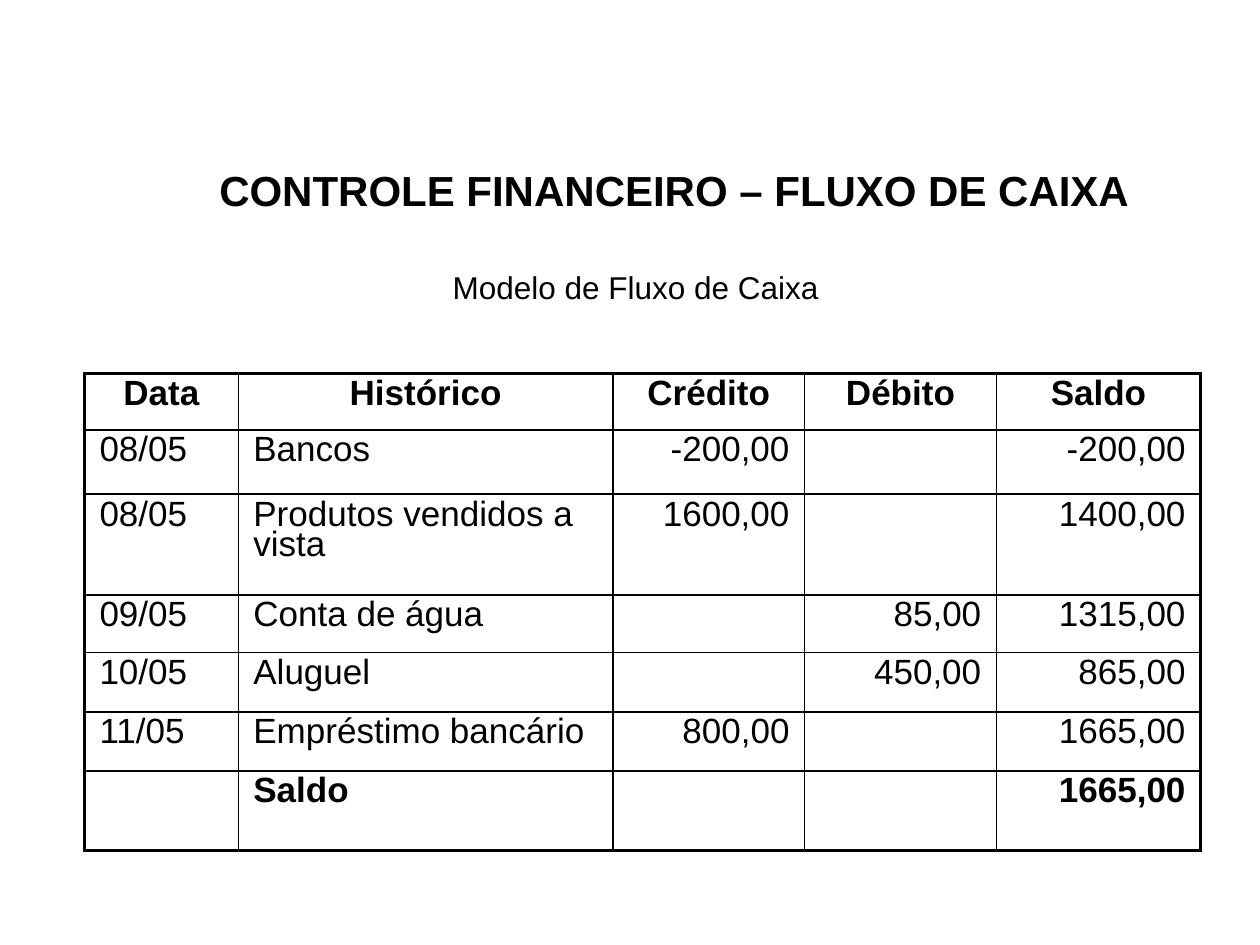
import pptx
import pptx.util
import pptx.dml.color
import pptx.enum.text
import pptx.oxml
import pptx.oxml.ns

Pt = pptx.util.Pt
Inches = pptx.util.Inches
ALIGN = pptx.enum.text.PP_ALIGN
ANCHOR = pptx.enum.text.MSO_ANCHOR
WIDE, HIGH = 10, 7.5
INK = "000000"
COLS = [1.22, 2.97, 1.52, 1.52, 1.62]
ROWS = [0.45, 0.51, 0.8, 0.46, 0.47, 0.47, 0.63]
SIDES = [ALIGN.LEFT, ALIGN.LEFT, ALIGN.RIGHT, ALIGN.RIGHT, ALIGN.RIGHT]
CASH = [
    ["Data", "Histórico", "Crédito", "Débito", "Saldo"],
    ["08/05", "Bancos", "-200,00", "", "-200,00"],
    ["08/05", "Produtos vendidos a vista", "1600,00", "", "1400,00"],
    ["09/05", "Conta de água", "", "85,00", "1315,00"],
    ["10/05", "Aluguel", "", "450,00", "865,00"],
    ["11/05", "Empréstimo bancário", "800,00", "", "1665,00"],
    ["", "Saldo", "", "", "1665,00"],
]


def color(code):
    return pptx.dml.color.RGBColor.from_string(code)


def write(frame, text, size, bold, align):
    para = frame.paragraphs[0]
    para.text = text
    para.alignment = align
    font = para.font
    font.name, font.size, font.bold = "Arial", Pt(size), bold
    font.color.rgb = color(INK)
    return para


def place(shape, box):
    left, top, width, height = box
    shape.left, shape.width = Inches(left * WIDE), Inches(width * WIDE)
    shape.top, shape.height = Inches(top * HIGH), Inches(height * HIGH)


def head(slide, box):
    title = slide.shapes.title
    place(title, box)
    frame = title.text_frame
    frame.word_wrap = False
    frame.auto_size = pptx.enum.text.MSO_AUTO_SIZE.NONE
    frame.vertical_anchor = ANCHOR.TOP
    write(frame, "CONTROLE FINANCEIRO – FLUXO DE CAIXA", 24, True, ALIGN.LEFT)


def label(slide, box):
    shape = slide.shapes.add_textbox(0, 0, 0, 0)
    place(shape, box)
    frame = shape.text_frame
    frame.word_wrap = True
    frame.margin_top = frame.margin_bottom = Inches(0.06)
    write(frame, "Modelo de Fluxo de Caixa", 18, False, ALIGN.CENTER)


def border(cell, edges):
    props = cell._tc.get_or_add_tcPr()
    space = pptx.oxml.ns.nsdecls("a")
    for side, thick in edges.items():
        width = Pt(2.25 if thick else 1)
        props.append(pptx.oxml.parse_xml(
            f'<a:ln{side} {space} w="{width}"><a:solidFill>'
            f'<a:srgbClr val="{INK}"/></a:solidFill></a:ln{side}>'))


def ledger(slide, box):
    frame = slide.shapes.add_table(len(ROWS), len(COLS), 0, 0, 0, 0)
    place(frame, box)
    table = frame.table
    table.first_row = table.horz_banding = False
    for col, share in zip(table.columns, COLS):
        col.width = Inches(box[2] * WIDE * share / sum(COLS))
    for row, share in zip(table.rows, ROWS):
        row.height = Inches(box[3] * HIGH * share / sum(ROWS))
    end, last = len(ROWS) - 1, len(COLS) - 1
    for r, line in enumerate(CASH):
        for c, text in enumerate(line):
            cell = table.cell(r, c)
            border(cell, {"L": c == 0, "R": c == last,
                          "T": r == 0, "B": r == end})
            cell.fill.background()
            cell.margin_left = cell.margin_right = Inches(0.12)
            cell.margin_top = cell.margin_bottom = Inches(0.06)
            align = SIDES[c] if r else ALIGN.CENTER
            para = write(cell.text_frame, text, 20, r in (0, end), align)
            para.line_spacing = 0.78


def main():
    deck = pptx.Presentation()
    deck.slide_width, deck.slide_height = Inches(WIDE), Inches(HIGH)
    slide = deck.slides.add_slide(deck.slide_layouts[5])
    ledger(slide, (0.067, 0.395, 0.886, 0.505))
    label(slide, (0.227, 0.276, 0.555, 0.056))
    head(slide, (0.164, 0.167, 0.757, 0.067))
    deck.save("out.pptx")


if __name__ == "__main__":
    main()
